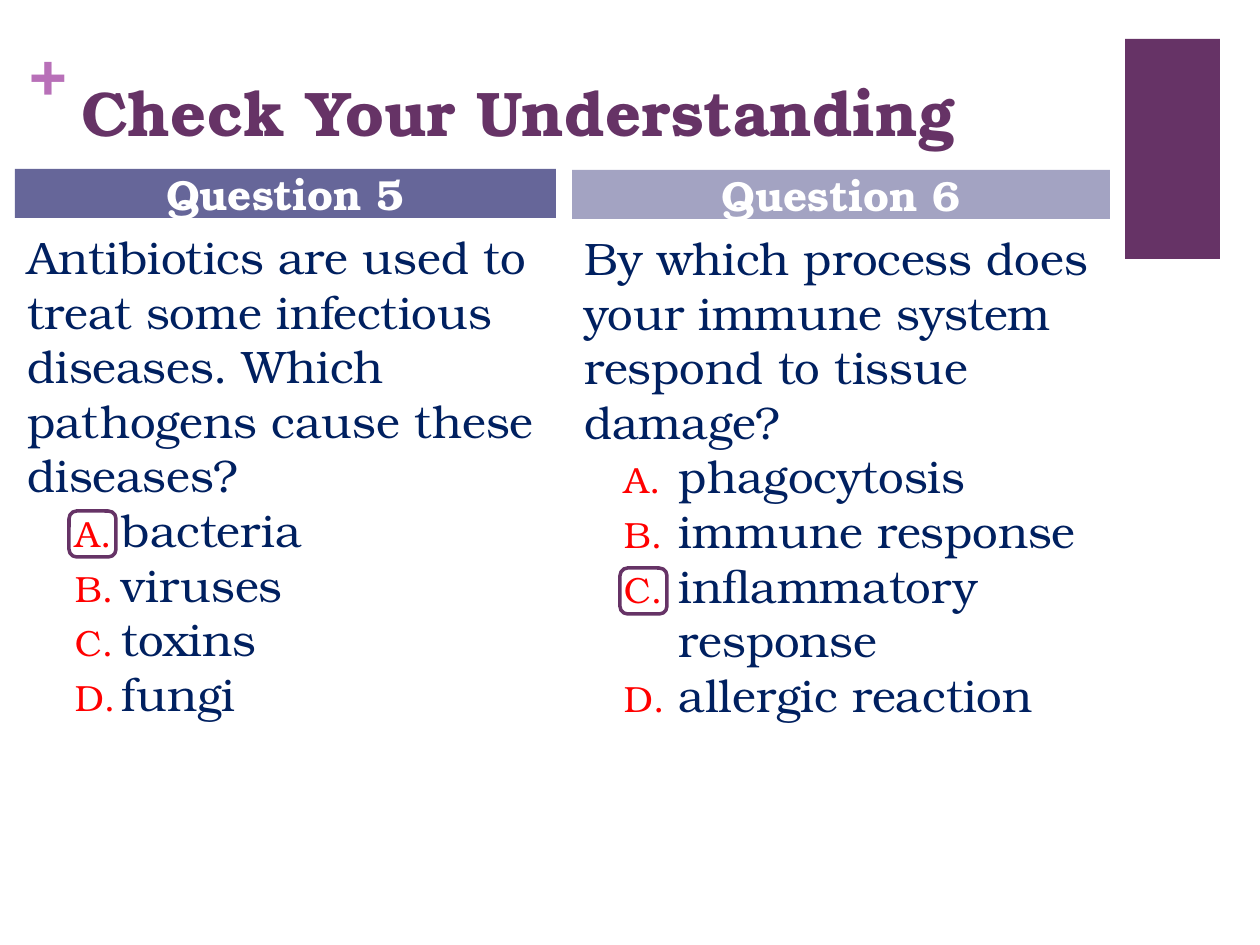
import dataclasses
import pptx
import pptx.dml.color
import pptx.enum.shapes
import pptx.enum.text
import pptx.oxml.ns
import pptx.slide
import pptx.util
import lxml.etree

EMU_PER_PX = 914400 / 126
FONT = "TeX Gyre Bonum"
PURPLE, ORCHID, NAVY, RED, WHITE = "663366", "B870B8", "002060", "FF0000", "FFFFFF"
SHAPES = pptx.enum.shapes.MSO_SHAPE
ALIGN = pptx.enum.text.PP_ALIGN
ANCHOR = pptx.enum.text.MSO_ANCHOR


@dataclasses.dataclass
class Area:
    left: int
    top: int
    width: int
    height: int

    def emu(self) -> list:
        return [px(value) for value in dataclasses.astuple(self)]


@dataclasses.dataclass
class Question:
    heading: str
    fill: str
    header: Area
    body: Area
    prompt: str
    answers: list
    hanging: int
    answer_mark: Area


QUESTIONS = [
    Question(
        "Question 5", "666699", Area(15, 169, 541, 49), Area(15, 223, 541, 707),
        "Antibiotics are used to treat some infectious diseases. "
        "Which pathogens cause these diseases?",
        ["bacteria", "viruses", "toxins", "fungi"],
        47, Area(69, 511, 47, 46),
    ),
    Question(
        "Question 6", "A3A3C2", Area(572, 170, 538, 49), Area(572, 224, 538, 702),
        "By which process does your immune system respond to tissue damage?",
        ["phagocytosis", "immune response", "inflammatory response", "allergic reaction"],
        55, Area(620, 568, 47, 46),
    ),
]


def px(value: int) -> pptx.util.Emu:
    return pptx.util.Emu(round(value * EMU_PER_PX))


def colour(value: str) -> pptx.dml.color.RGBColor:
    return pptx.dml.color.RGBColor.from_string(value)


def style(para, size: int, text_colour: str, bold: bool = False) -> None:
    for span in para.runs:
        span.font.name = FONT
        span.font.size = pptx.util.Pt(size)
        span.font.bold = bold
        span.font.color.rgb = colour(text_colour)


def add_block(page: pptx.slide.Slide, preset, area: Area, fill: str = "", line: str = ""):
    block = page.shapes.add_shape(preset, *area.emu())
    block.shadow.inherit = False
    if fill:
        block.fill.solid()
        block.fill.fore_color.rgb = colour(fill)
    else:
        block.fill.background()
    if line:
        block.line.color.rgb = colour(line)
        block.line.width = pptx.util.Pt(2)
    else:
        block.line.fill.background()
    return block


def add_text(page: pptx.slide.Slide, area: Area, text: str, size: int,
             text_colour: str, bold: bool = False):
    box = page.shapes.add_textbox(*area.emu())
    box.text_frame.word_wrap = True
    box.text_frame.text = text
    style(box.text_frame.paragraphs[0], size, text_colour, bold)
    return box


def letter_answer(para, hanging: int) -> None:
    properties = para._p.get_or_add_pPr()
    properties.set("marL", str(pptx.util.Inches(0.75)))
    properties.set("indent", str(-px(hanging)))

    def add(parent, tag: str, **attributes: str):
        return lxml.etree.SubElement(parent, pptx.oxml.ns.qn(tag), attributes)

    add(add(properties, "a:buClr"), "a:srgbClr", val=RED)
    add(properties, "a:buSzPct", val="80000")
    add(properties, "a:buFont", typeface=FONT)
    add(properties, "a:buAutoNum", type="alphaUcPeriod")


def add_question(page: pptx.slide.Slide, question: Question) -> None:
    body = add_text(page, question.body, question.prompt, 26, NAVY)
    for answer in question.answers:
        para = body.text_frame.add_paragraph()
        para.text = answer
        style(para, 26, NAVY)
        letter_answer(para, question.hanging)

    header = add_block(page, SHAPES.RECTANGLE, question.header, fill=question.fill)
    frame = header.text_frame
    frame.margin_top = frame.margin_bottom = 0
    frame.vertical_anchor = ANCHOR.MIDDLE
    frame.text = question.heading
    frame.paragraphs[0].alignment = ALIGN.CENTER
    style(frame.paragraphs[0], 24, WHITE, bold=True)

    add_block(page, SHAPES.ROUNDED_RECTANGLE, question.answer_mark, line=PURPLE)


def main() -> None:
    deck = pptx.Presentation()
    deck.slide_width, deck.slide_height = px(1260), px(945)
    page = deck.slides.add_slide(deck.slide_layouts[6])

    add_block(page, SHAPES.RECTANGLE, Area(1125, 39, 95, 220), fill=PURPLE)
    plus = add_text(page, Area(30, 32, 35, 77), "+", 36, ORCHID, bold=True).text_frame
    plus.word_wrap = False
    plus.margin_left = plus.margin_right = plus.margin_top = plus.margin_bottom = 0
    add_text(page, Area(69, 67, 1041, 99), "Check Your Understanding", 36, PURPLE, bold=True)
    for question in QUESTIONS:
        add_question(page, question)

    deck.save("out.pptx")


if __name__ == "__main__":
    main()
